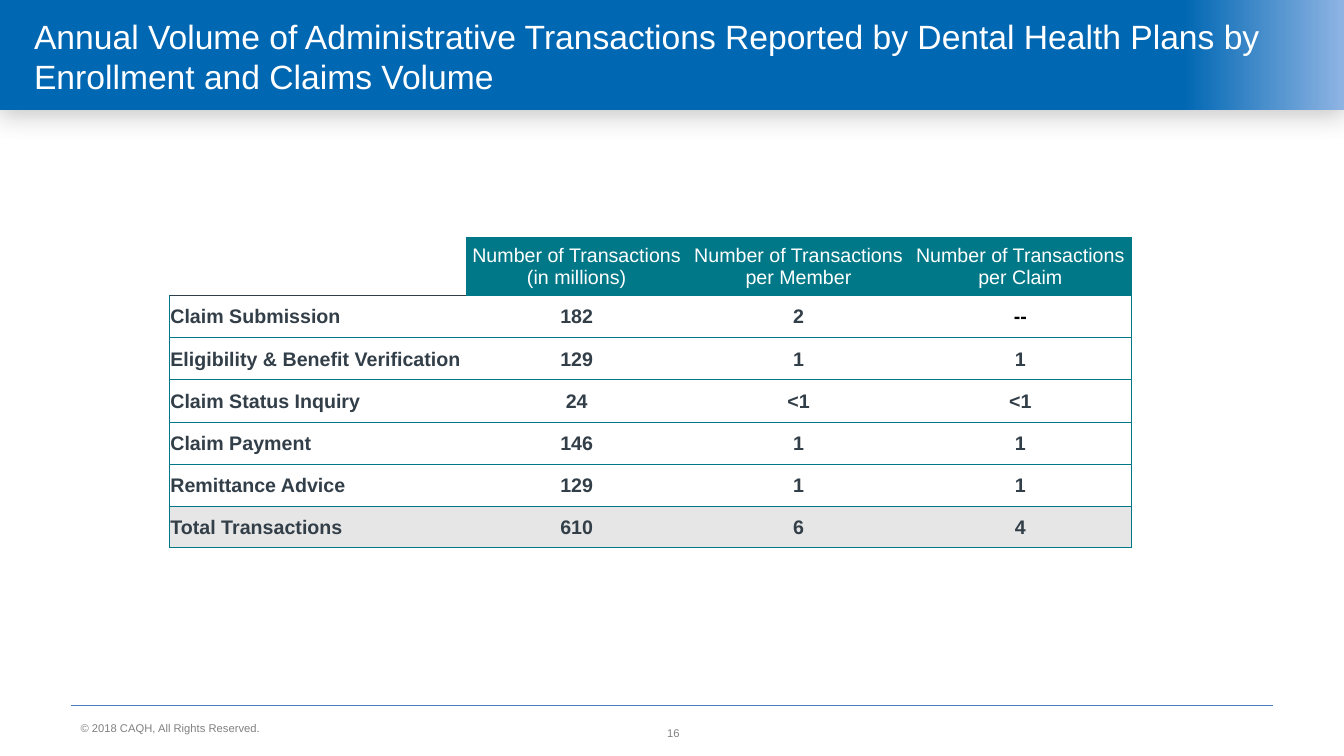
from lxml import etree
from pptx import Presentation
from pptx.dml.color import RGBColor as RGB
from pptx.enum.shapes import MSO_CONNECTOR as Connector, MSO_SHAPE as Preset
from pptx.enum.text import MSO_ANCHOR as Anchor, PP_ALIGN as Align
from pptx.oxml.ns import qn
from pptx.util import Inches, Pt

COLORS = {
    "band": "0067B3", "band_end": "8EB4E3", "shadow": "808080", "rule": "4A7EBB",
    "white": "FFFFFF", "muted": "808080", "teal": "007888", "ink": "323E48",
    "black": "000000", "total": "E7E6E6",
}
HEADINGS = ["", "Number of Transactions\v(in millions)",
            "Number of Transactions per Member", "Number of Transactions per Claim"]
VOLUMES = [
    ["Claim Submission", "182", "2", "--"],
    ["Eligibility & Benefit Verification", "129", "1", "1"],
    ["Claim Status Inquiry", "24", "<1", "<1"],
    ["Claim Payment", "146", "1", "1"],
    ["Remittance Advice", "129", "1", "1"],
    ["Total Transactions", "610", "6", "4"],
]


def add_xml(parent, tag, **attributes):
    return etree.SubElement(parent, qn(tag), {k: str(v) for k, v in attributes.items()})


class SlideBuilder:
    font = "Arial"

    def __init__(self, slide):
        self.slide = slide

    def set_text(self, frame, text, size, color, align=Align.LEFT, bold=False):
        frame.text = text
        frame.word_wrap = True
        for paragraph in frame.paragraphs:
            paragraph.alignment = align
            for run in paragraph.runs:
                run.font.name = self.font
                run.font.size = Pt(size)
                run.font.bold = bold
                run.font.color.rgb = RGB.from_string(COLORS[color])

    def text(self, box, text, size, color, anchor, align=Align.LEFT):
        frame = self.slide.shapes.add_textbox(*map(Inches, box)).text_frame
        frame.vertical_anchor = anchor
        self.set_text(frame, text, size, color, align)

    def band(self, box, stops):
        band = self.slide.shapes.add_shape(Preset.RECTANGLE, *map(Inches, box))
        band.line.fill.background()
        band.shadow.inherit = False
        properties = band._element.spPr
        gradient = etree.Element(qn("a:gradFill"), rotWithShape="1")
        stop_list = add_xml(gradient, "a:gsLst")
        for percent, color in stops:
            stop = add_xml(stop_list, "a:gs", pos=percent * 1000)
            add_xml(stop, "a:srgbClr", val=COLORS[color])
        add_xml(gradient, "a:lin", ang=0, scaled=0)
        properties.find(qn("a:prstGeom")).addnext(gradient)
        shadow = add_xml(properties.find(qn("a:effectLst")), "a:outerShdw",
                         blurRad=Pt(18), dist=Pt(3), dir=102 * 60000,
                         algn="t", rotWithShape=0)
        shade = add_xml(shadow, "a:srgbClr", val=COLORS["shadow"])
        add_xml(shade, "a:alpha", val=43000)

    def rule(self, left, right, top, color, width):
        rule = self.slide.shapes.add_connector(
            Connector.STRAIGHT, Inches(left), Inches(top), Inches(right), Inches(top))
        rule.line.color.rgb = RGB.from_string(COLORS[color])
        rule.line.width = Pt(width)
        add_xml(rule._element.spPr, "a:effectLst")

    def borders(self, cell, edges):
        properties = cell._tc.get_or_add_tcPr()
        for side in "LRTB":
            color, width = edges.get(side, (None, 0))
            line = add_xml(properties, f"a:ln{side}", w=Pt(width))
            if color:
                fill = add_xml(line, "a:solidFill")
                add_xml(fill, "a:srgbClr", val=COLORS[color])
            else:
                add_xml(line, "a:noFill")

    def cell(self, cell, text, color, align, bold, fill, edges):
        self.borders(cell, edges)
        cell.margin_left = cell.margin_right = cell.margin_top = Inches(0.01)
        cell.margin_bottom = 0
        cell.vertical_anchor = Anchor.MIDDLE
        if fill:
            cell.fill.solid()
            cell.fill.fore_color.rgb = RGB.from_string(COLORS[fill])
        else:
            cell.fill.background()
        self.set_text(cell.text_frame, text, 14, color, align, bold)

    def table(self, left, top, widths, heights, rows):
        table = self.slide.shapes.add_table(
            len(rows), len(widths), Inches(left), Inches(top),
            Inches(sum(widths)), Inches(sum(heights))).table
        table.first_row = table.horz_banding = False
        for column, width in zip(table.columns, widths):
            column.width = Inches(width)
        for row, height in zip(table.rows, heights):
            row.height = Inches(height)
        teal, ink = ("teal", 0.75), ("ink", 1)
        last_row, last_column = len(rows) - 1, len(widths) - 1
        for r, values in enumerate(rows):
            for c, value in enumerate(values):
                heading, label = r == 0, c == 0
                edges = {"T": teal, "B": teal}
                if label and r < 2:
                    edges["B" if heading else "T"] = ink
                if heading and label:
                    del edges["T"]
                elif label:
                    edges["L"] = teal
                if c == last_column:
                    edges["R"] = teal
                if heading:
                    fill = None if label else "teal"
                else:
                    fill = "total" if r == last_row else None
                color = "white" if heading else "black" if value == "--" else "ink"
                align = Align.LEFT if label else Align.CENTER
                self.cell(table.cell(r, c), value, color, align, not heading, fill, edges)


def main():
    deck = Presentation()
    deck.slide_width, deck.slide_height = Inches(13.33), Inches(7.5)
    page = SlideBuilder(deck.slides.add_slide(deck.slide_layouts[6]))
    page.band((0, 0, 13.33, 1.09), [(0, "band"), (88, "band"), (100, "band_end")])
    page.text((0.7, 7.03, 4.92, 0.31), "© 2018 CAQH, All Rights Reserved.",
              8, "muted", Anchor.BOTTOM)
    page.rule(0.7, 12.63, 7, "rule", 0.75)
    page.text((0.24, 0.15, 12.87, 0.81),
              "Annual Volume of Administrative Transactions Reported by "
              "Dental Health Plans by Enrollment and Claims Volume",
              24, "white", Anchor.MIDDLE)
    page.text((5.18, 7.07, 3, 0.4), "16", 8, "muted", Anchor.MIDDLE, Align.CENTER)
    page.table(1.68, 2.36, [2.94] + [2.2] * 3, [0.57] + [0.42] * 5 + [0.4],
               [HEADINGS] + VOLUMES)
    deck.save("out.pptx")


if __name__ == "__main__":
    main()
